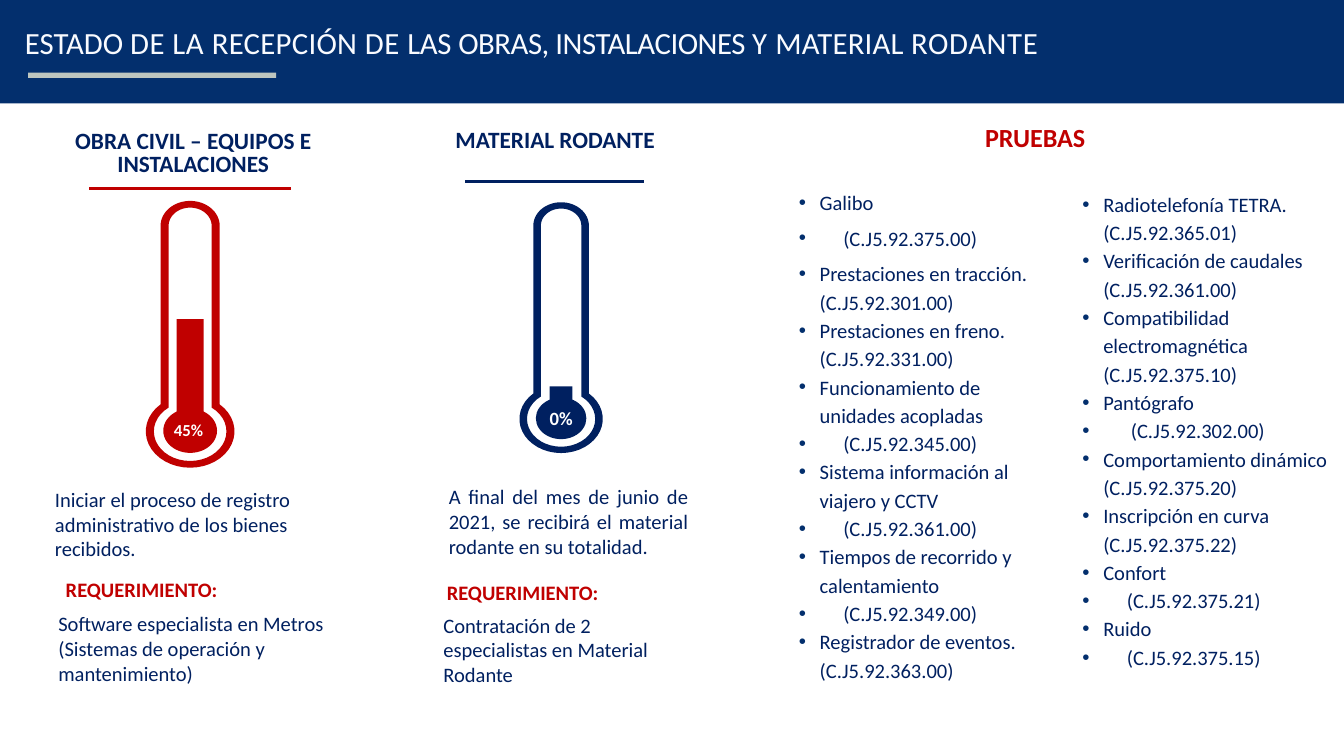
from math import asin, cos, pi, sin

from lxml.etree import SubElement
from pptx import Presentation
from pptx.dml.color import RGBColor
from pptx.enum.shapes import MSO_CONNECTOR, MSO_SHAPE
from pptx.enum.text import PP_ALIGN
from pptx.oxml.ns import qn
from pptx.util import Inches, Pt

BLUE = RGBColor(0x03, 0x2F, 0x6D)
NAVY = RGBColor(0x00, 0x20, 0x60)
RED = RGBColor(0xC0, 0x00, 0x00)
GREY = RGBColor(0xBE, 0xC6, 0xBF)
PALE = RGBColor(0xF9, 0xFB, 0xFF)
WHITE = RGBColor(0xFF, 0xFF, 0xFF)

TITLE = [("ESTADO ", 0), ("DE LA ", 50), ("RECEPCIÓN ", 30), ("DE ", 50),
         ("LAS ", -30), ("OBRAS, INSTALACIONES ", -50), ("Y ", 70),
         ("MATERIAL ", 20), ("RODANTE", 70)]

LEFT = ["Galibo", "(C.J5.92.375.00)",
        "Prestaciones en tracción. (C.J5.92.301.00)",
        "Prestaciones en freno. (C.J5.92.331.00)",
        "Funcionamiento de unidades acopladas", "(C.J5.92.345.00)",
        "Sistema información al viajero y CCTV", "(C.J5.92.361.00)",
        "Tiempos de recorrido y calentamiento", "(C.J5.92.349.00)",
        "Registrador de eventos. (C.J5.92.363.00)"]

RIGHT = ["Radiotelefonía TETRA. (C.J5.92.365.01)",
         "Verificación de caudales (C.J5.92.361.00)",
         "Compatibilidad electromagnética (C.J5.92.375.10)",
         "Pantógrafo", "(C.J5.92.302.00)",
         "Comportamiento dinámico (C.J5.92.375.20)",
         "Inscripción en curva (C.J5.92.375.22)",
         "Confort", "(C.J5.92.375.21)", "Ruido", "(C.J5.92.375.15)"]


def arc(x, y, rx, ry, start, end, steps=32):
    """Return points of an ellipse arc, with angles clockwise from the top."""
    turns = [start + (end - start) * i / steps for i in range(steps + 1)]
    return [(Inches(x + rx * sin(t)), Inches(y - ry * cos(t))) for t in turns]


class Board:
    """Hold the style and the current slide, and draw each kind of element."""

    font = "Calibri"

    def __init__(self, slide):
        self.shapes = slide.shapes

    def paint(self, shape, color):
        shape.shadow.inherit = False
        shape.fill.solid()
        shape.fill.fore_color.rgb = color
        shape.line.fill.background()

    def block(self, kind, x, y, w, h, color):
        shape = self.shapes.add_shape(kind, Inches(x), Inches(y), Inches(w), Inches(h))
        self.paint(shape, color)

    def rule(self, x, y, end, color):
        line = self.shapes.add_connector(
            MSO_CONNECTOR.STRAIGHT, Inches(x), Inches(y), Inches(end), Inches(y))
        line.line.color.rgb = color
        line.line.width = Pt(3)
        SubElement(line._element.spPr, qn("a:effectLst"))

    def style(self, run, size, color, bold=False):
        run.font.name = self.font
        run.font.size = Pt(size)
        run.font.color.rgb = color
        run.font.bold = bold

    def frame(self, x, y, w, h, wrap=True):
        box = self.shapes.add_textbox(Inches(x), Inches(y), Inches(w), Inches(h))
        box.text_frame.word_wrap = wrap
        return box.text_frame

    def text(self, words, x, y, w, h, size=22, color=NAVY, bold=False,
             align=PP_ALIGN.LEFT, lead=None, wrap=True):
        frame = self.frame(x, y, w, h, wrap)
        frame.text = words
        for para in frame.paragraphs:
            para.alignment = align
            para.line_spacing = lead
            for run in para.runs:
                self.style(run, size, color, bold)

    def title(self, parts, x, y, w, h):
        frame = self.frame(x, y, w, h)
        frame.margin_left = frame.margin_right = frame.margin_bottom = 0
        frame.margin_top = Inches(0.01)
        para = frame.paragraphs[0]
        para.space_before = Pt(1)
        for words, gap in parts:
            run = para.add_run()
            run.text = words
            self.style(run, 33, PALE)
            run._r.get_or_add_rPr().set("spc", str(gap))

    def bullets(self, items, x, y, w, h, loose=0):
        frame = self.frame(x, y, w, h)
        frame.text = "\n".join(items)
        for i, para in enumerate(frame.paragraphs):
            pad = 0
            if para.text.startswith("("):
                pad = 0.41 if "302" in para.text else 0.35
            para.line_spacing = 1.15
            para.space_after = Pt(8 if i < loose else 0)
            props = para._p.get_or_add_pPr()
            props.set("marL", str(Inches(0.81 + pad)))
            props.set("indent", str(Inches(-0.31 - pad)))
            tint = SubElement(props, qn("a:buClr"))
            SubElement(tint, qn("a:srgbClr"), val=str(BLUE))
            SubElement(props, qn("a:buFont"), typeface="Arial")
            SubElement(props, qn("a:buChar"), char="•")
            self.style(para.runs[0], 22, NAVY)

    def gauge(self, x, top, scale, color, width, level, height):
        def ring(stem, cap, rx, ry):
            turn = asin(stem / rx)
            neck = arc(x, top + 0.37 * scale, stem * scale, cap * scale, -pi / 2, pi / 2)
            bulb = arc(x, top + 3.43 * scale, rx * scale, ry * scale, turn, 2 * pi - turn)
            return neck + bulb

        outer, inner = ring(0.44, 0.37, 0.66, 0.54), ring(0.32, 0.27, 0.54, 0.44)
        form = self.shapes.build_freeform(*outer[0], scale=1.0)
        form.add_line_segments(outer[1:], close=True)
        form.move_to(*inner[-1])
        form.add_line_segments(inner[-2::-1], close=True)
        self.paint(form.convert_to_shape(), color)
        self.block(MSO_SHAPE.OVAL, x - 0.4 * scale, top + 3.09 * scale,
                   0.8 * scale, 0.66 * scale, color)
        self.block(MSO_SHAPE.RECTANGLE, x - width / 2, level, width, height, color)


def main():
    """Build the slide and save it."""
    deck = Presentation()
    deck.slide_width, deck.slide_height = Inches(20), Inches(11.25)
    board = Board(deck.slides.add_slide(deck.slide_layouts[6]))

    board.block(MSO_SHAPE.RECTANGLE, 0, 0, 20, 1.54, BLUE)
    board.block(MSO_SHAPE.RECTANGLE, 0.42, 1.08, 3.69, 0.08, GREY)
    board.title(TITLE, 0.37, 0.35, 19.14, 0.58)

    head = dict(size=25, bold=True, align=PP_ALIGN.CENTER, lead=Pt(25))
    need = dict(color=RED, bold=True, wrap=False)

    board.text("OBRA CIVIL – EQUIPOS E INSTALACIONES", 0.89, 1.9, 3.97, 0.81, **head)
    board.rule(1.33, 2.81, 4.33, RED)
    board.gauge(2.83, 2.99, 1, RED, 0.4, 4.75, 1.43)
    board.text("45%", 2.49, 6.2, 0.69, 0.4, 18, WHITE, True)
    board.text("Iniciar el proceso de registro administrativo de los bienes recibidos.",
               0.72, 7.2, 4.63, 1.21)
    board.text("REQUERIMIENTO:", 0.88, 8.54, 2.49, 0.47, **need)
    board.text("Software especialista en Metros\n(Sistemas de operación y mantenimiento)",
               0.77, 9.05, 4.55, 1.21)

    board.text("MATERIAL RODANTE", 6.48, 1.89, 3.56, 0.46, **head)
    board.rule(6.92, 2.7, 9.58, NAVY)
    board.gauge(8.35, 3.01, 0.94, NAVY, 0.34, 5.75, 0.32)
    board.text("0%", 8.08, 6.01, 0.61, 0.44, 20, WHITE, True)
    board.text("A final del mes de junio de 2021, se recibirá el material rodante "
               "en su totalidad.", 6.58, 7.16, 3.76, 1.21, align=PP_ALIGN.JUSTIFY)
    board.text("REQUERIMIENTO:", 6.55, 8.58, 2.49, 0.47, **need)
    board.text("Contratación de 2 especialistas en Material Rodante",
               6.5, 9.07, 3.65, 1.21)

    board.text("PRUEBAS", 14.56, 1.75, 1.72, 0.57, size=28, **need)
    board.bullets(LEFT, 11.29, 2.72, 4.41, 7.54, loose=2)
    board.bullets(RIGHT, 15.51, 2.75, 4.41, 7.31)
    deck.save("out.pptx")


if __name__ == "__main__":
    main()
